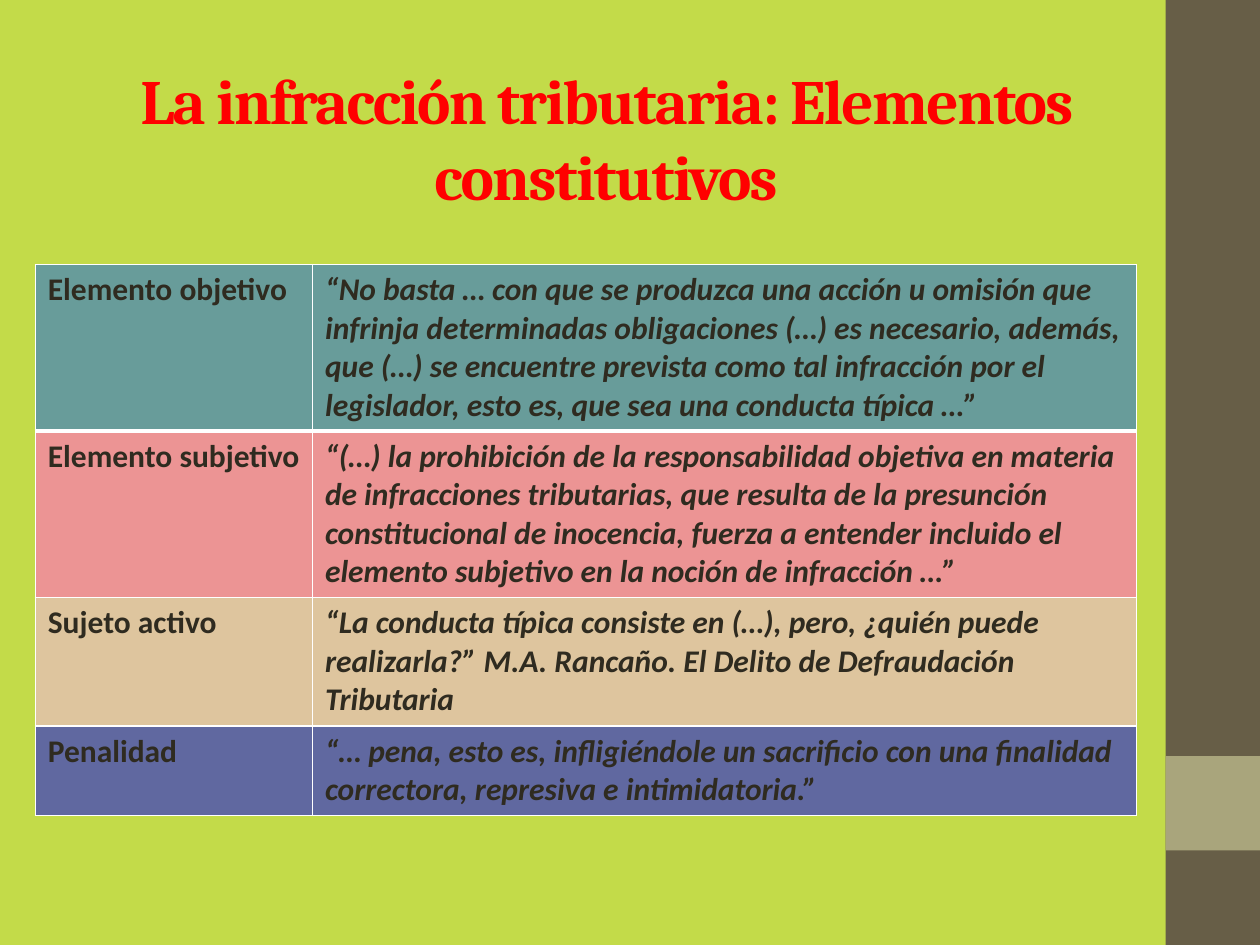
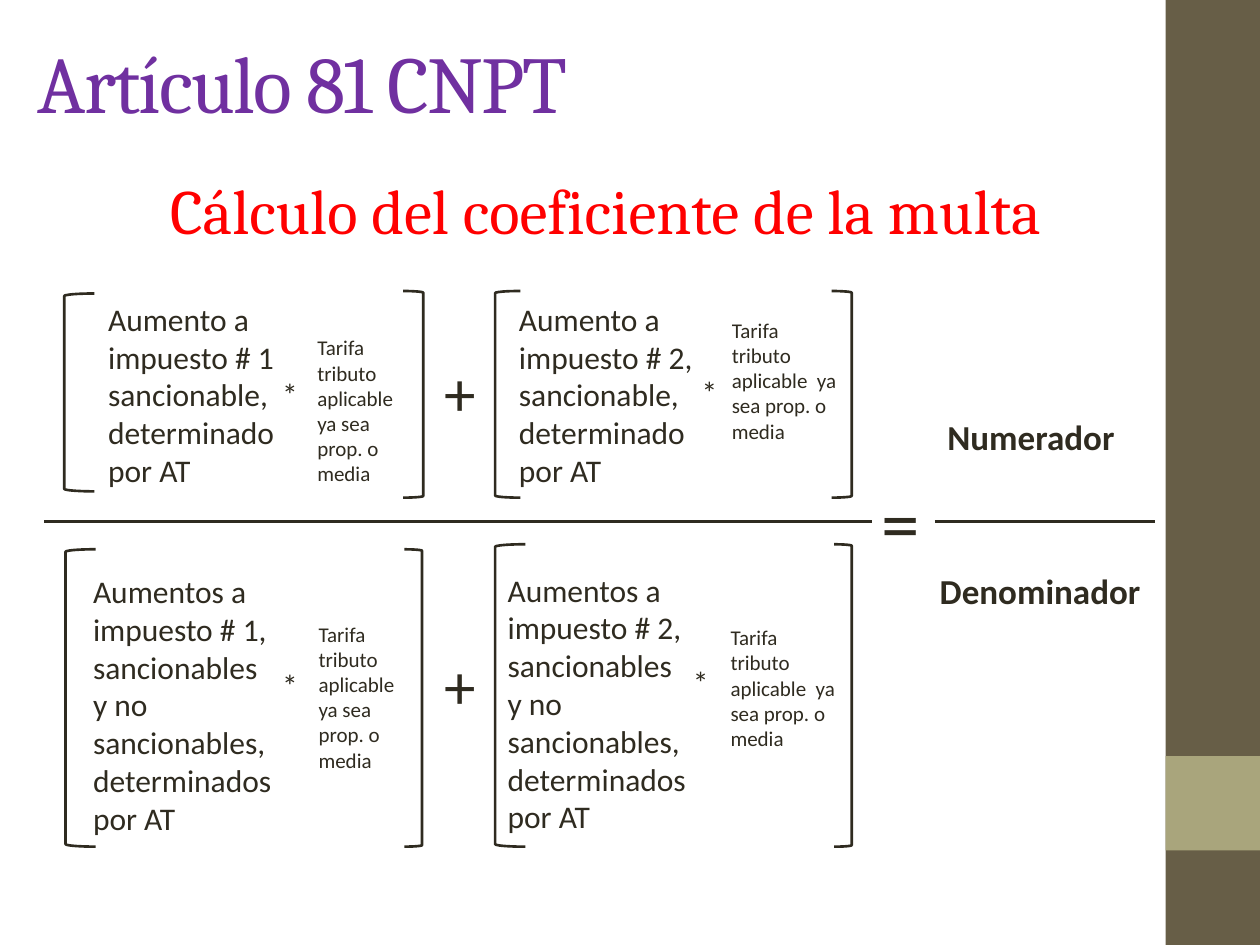
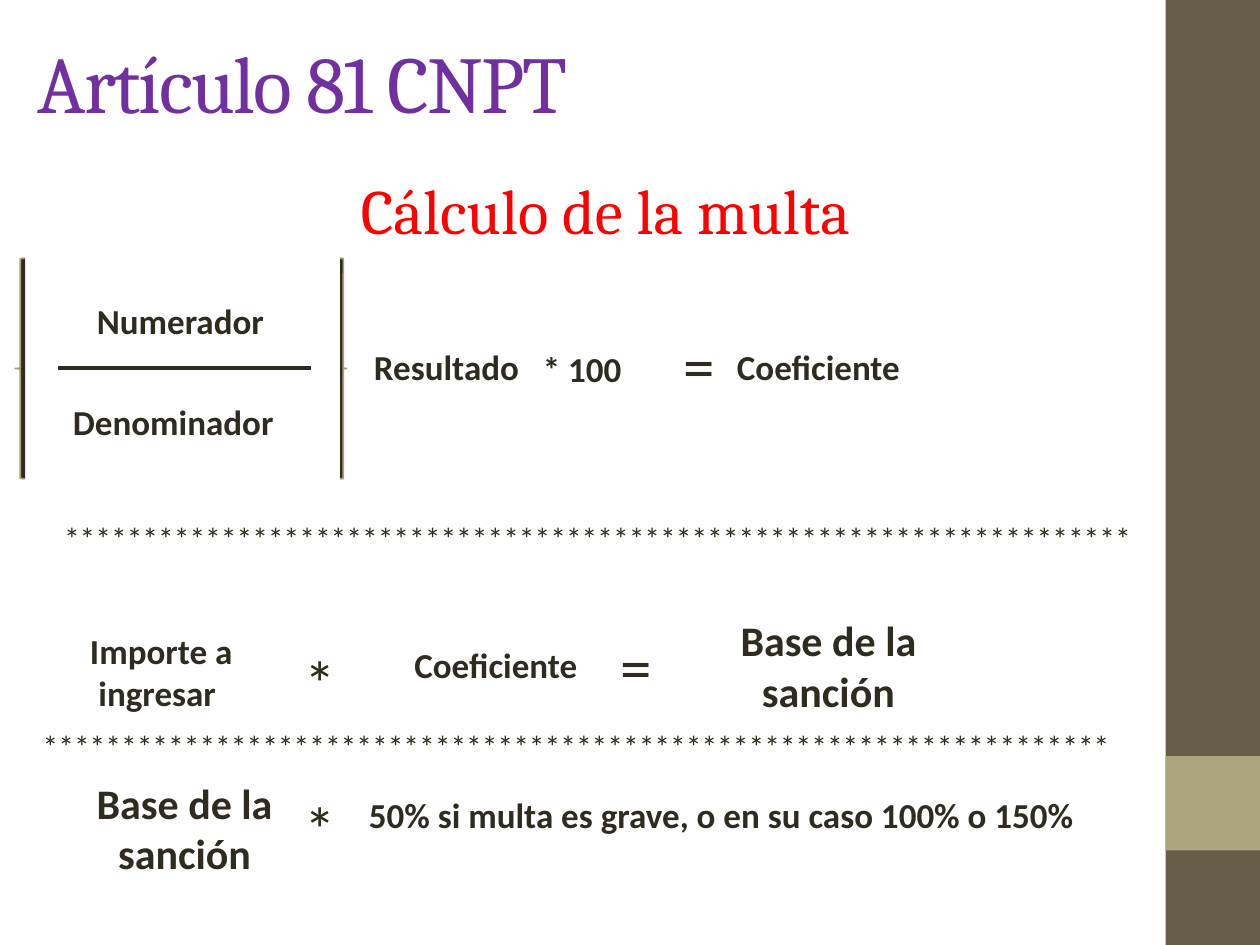
"""Build three slides on tax infractions and the calculation of the fine."""
from lxml.etree import SubElement
from pptx import Presentation
from pptx.dml.color import RGBColor
from pptx.enum.shapes import MSO_CONNECTOR, MSO_SHAPE
from pptx.enum.text import MSO_ANCHOR, MSO_AUTO_SIZE, PP_ALIGN
from pptx.oxml.ns import qn
from pptx.util import Inches, Pt

COLORS = {
    "lime": "C3DB49", "white": "FFFFFF", "band": "675E47", "accent": "A9A57C",
    "ink": "2F2B20", "red": "FF0000", "purple": "7030A0", "brace": "A6A278",
    "teal": "689C9A", "rose": "EC9494", "sand": "DEC59E", "indigo": "6068A0",
}
HEADING_FONT, BODY_FONT = "Cambria", "Calibri"
LEFT, CENTER = PP_ALIGN.LEFT, PP_ALIGN.CENTER

ELEMENTS_TITLE = "La infracción tributaria: Elementos constitutivos"
ELEMENTS = [
    ("Elemento objetivo",
     "“No basta … con que se produzca una acción u omisión que infrinja determinadas "
     "obligaciones (…) es necesario, además, que (…) se encuentre prevista como tal "
     "infracción por el legislador, esto es, que sea una conducta típica …”", "teal", 1.32),
    ("Elemento subjetivo",
     "“(…) la prohibición de la responsabilidad objetiva en materia de infracciones "
     "tributarias, que resulta de la presunción constitucional de inocencia, fuerza a "
     "entender incluido el elemento subjetivo en la noción de infracción …”", "rose", 1.32),
    ("Sujeto activo",
     "“La conducta típica consiste en (…), pero, ¿quién puede realizarla?” M.A. Rancaño. "
     "El Delito de Defraudación Tributaria", "sand", 1.02),
    ("Penalidad",
     "“… pena, esto es, infligiéndole un sacrificio con una finalidad correctora, "
     "represiva e intimidatoria.”", "indigo", 0.71),
]
ELEMENT_COLUMNS = (2.2, 6.54)

ARTICLE_TITLE = "Artículo 81 CNPT"
RATE = "Tarifa tributo aplicable  ya sea prop. o media"
INCREASES = "Aumentos a impuesto # {}, sancionables y no sancionables, determinados por AT"

COEFFICIENT_HEADING = "Cálculo del coeficiente de la multa"
COEFFICIENT_LABELS = [
    (0.76, 2.33, 1.54, "Aumento a impuesto # 1 sancionable, determinado por AT", 18),
    (4.02, 2.33, 1.61, "Aumento a impuesto # 2, sancionable, determinado por AT", 18),
    (0.64, 4.49, 1.66, INCREASES.format(1), 18),
    (3.93, 4.48, 1.62, INCREASES.format(2), 18),
    (2.42, 2.61, 0.86, RATE, 12),
    (5.71, 2.47, 1.06, RATE, 12),
    (2.43, 4.88, 0.85, RATE, 12),
    (5.7, 4.91, 1.06, RATE, 12),
    (2.14, 2.93, 0.31, "*", 18),
    (5.47, 2.91, 0.31, "*", 18),
    (2.14, 5.24, 0.31, "*", 18),
    (5.4, 5.21, 0.31, "*", 18),
    (3.43, 2.76, 0.31, "+", 36),
    (3.43, 5.08, 0.31, "+", 36),
    (6.9, 3.72, 0.31, "=", 44),
    (7.42, 3.25, 1.65, "Numerador", 20, True),
    (7.36, 4.47, 2.1, "Denominador", 20, True),
]
BRACKET_PAIRS = [
    ((0.51, 2.33, 0.24, 1.57), (3.2, 2.31, 0.16, 1.64)),
    ((3.93, 2.31, 0.2, 1.64), (6.6, 2.31, 0.16, 1.64)),
    ((0.52, 4.36, 0.24, 2.36), (3.21, 4.36, 0.14, 2.36)),
    ((3.93, 4.32, 0.24, 2.4), (6.62, 4.32, 0.14, 2.4)),
]
COEFFICIENT_BARS = [(0.35, 6.92, 4.14), (7.42, 9.17, 4.14)]

FINE_HEADING = "Cálculo de la multa"
SEPARATOR = "*" * 68
FINE_LABELS = [
    (0.67, 2.33, 1.57, "Numerador", 20, True),
    (0.48, 3.13, 1.82, "Denominador", 20, True),
    (2.87, 2.69, 1.5, "Resultado", 20, True),
    (4.21, 2.71, 1.11, "* 100", 20, True),
    (5.33, 2.54, 0.39, "=", 36),
    (5.75, 2.69, 1.65, "Coeficiente", 20, True),
    (0.41, 4.07, 8.78, SEPARATOR, 18),
    (0.31, 4.95, 1.94, "Importe a ingresar ", 20, True, CENTER),
    (2.32, 5.06, 0.87, "*", 36),
    (3.19, 5.06, 1.65, "Coeficiente", 20, True),
    (4.83, 4.93, 0.39, "=", 36),
    (5.55, 4.83, 2.05, "Base de la sanción", 24, True, CENTER),
    (0.24, 5.72, 8.78, SEPARATOR, 18),
    (0.44, 6.12, 2.05, "Base de la sanción", 24, True, CENTER),
    (2.32, 6.22, 0.87, "*", 36),
    (2.83, 6.25, 6.03, "50% si multa es grave, o en su caso 100% o 150%", 20, True),
]
FINE_BRACES = ((0.12, 2.05, 0.08, 1.75), (2.7, 2.05, 0.05, 1.75))
FINE_BAR = (0.46, 2.47, 2.92)


def rgb(name):
    return RGBColor.from_string(COLORS[name])


def write(frame, text, size, color="ink", font=BODY_FONT, bold=False, italic=False, align=LEFT):
    frame.text = text
    paragraph = frame.paragraphs[0]
    paragraph.alignment = align
    style = paragraph.runs[0].font
    style.name, style.size, style.bold, style.italic = font, Pt(size), bold, italic
    style.color.rgb = rgb(color)
    return paragraph.runs[0]


def add_outline(slide, preset, box, fill=None, line=None, width=1.5):
    outline = slide.shapes.add_shape(preset, *map(Inches, box))
    outline.shadow.inherit = False
    if fill:
        outline.fill.solid()
        outline.fill.fore_color.rgb = rgb(fill)
    else:
        outline.fill.background()
    if line:
        outline.line.color.rgb = rgb(line)
        outline.line.width = Pt(width)
    else:
        outline.line.fill.background()


def add_pair(slide, presets, boxes, **style):
    for preset, box in zip(presets, boxes):
        add_outline(slide, preset, box, **style)


def add_bar(slide, start, end, top):
    bar = slide.shapes.add_connector(
        MSO_CONNECTOR.STRAIGHT, Inches(start), Inches(top), Inches(end), Inches(top))
    bar.line.color.rgb = rgb("ink")
    bar.line.width = Pt(2)
    SubElement(bar.element.spPr, qn("a:effectLst"))


def add_label(slide, left, top, width, text, size, bold=False, align=LEFT):
    height = 0.5
    label = slide.shapes.add_textbox(*map(Inches, (left, top, width, height)))
    label.text_frame.word_wrap = True
    write(label.text_frame, text, size, bold=bold, align=align)


def add_slide(deck, background, title, box, size, color, bold=False, align=LEFT):
    slide = deck.slides.add_slide(deck.slide_layouts[5])
    slide.background.fill.solid()
    slide.background.fill.fore_color.rgb = rgb(background)
    add_outline(slide, MSO_SHAPE.RECTANGLE, (9.25, 0, 0.75, 7.5), fill="band")
    add_outline(slide, MSO_SHAPE.RECTANGLE, (9.25, 6, 0.75, 0.75), fill="accent")
    heading = slide.shapes.title
    heading.left, heading.top, heading.width, heading.height = map(Inches, box)
    frame = heading.text_frame
    frame.word_wrap = True
    frame.auto_size = MSO_AUTO_SIZE.NONE
    frame.vertical_anchor = MSO_ANCHOR.TOP
    run = write(frame, title, size, color, HEADING_FONT, bold, align=align)
    run.font._element.set("spc", "-100")
    return slide


def add_article_slide(deck, heading, labels):
    slide = add_slide(deck, "white", ARTICLE_TITLE, (0.2, 0.21, 8.97, 0.87), 46, "purple")
    subtitle = slide.shapes.add_textbox(*map(Inches, (0.67, 1.07, 8.27, 0.94)))
    subtitle.text_frame.word_wrap = True
    subtitle.text_frame.vertical_anchor = MSO_ANCHOR.BOTTOM
    write(subtitle.text_frame, heading, 36, "red", HEADING_FONT, align=CENTER)
    for label in labels:
        add_label(slide, *label)
    return slide


def add_borders(cell, widths):
    properties = cell._tc.get_or_add_tcPr()
    for side, width in zip(("lnL", "lnR", "lnT", "lnB"), widths):
        border = SubElement(properties, qn(f"a:{side}"), w=str(Pt(width)))
        fill = SubElement(border, qn("a:solidFill"))
        SubElement(fill, qn("a:srgbClr"), val=COLORS["white"])


def add_elements_table(slide):
    height = sum(element[-1] for element in ELEMENTS)
    box = map(Inches, (0.28, 2.1, sum(ELEMENT_COLUMNS), height))
    table = slide.shapes.add_table(len(ELEMENTS), len(ELEMENT_COLUMNS), *box).table
    table.horz_banding = False
    for column, width in zip(table.columns, ELEMENT_COLUMNS):
        column.width = Inches(width)
    for index, (name, quote, fill, row_height) in enumerate(ELEMENTS):
        table.rows[index].height = Inches(row_height)
        top, bottom = (3 if index == 1 else 1), (3 if index == 0 else 1)
        for column, text in enumerate((name, quote)):
            cell = table.cell(index, column)
            add_borders(cell, (1, 1, top, bottom))
            cell.fill.solid()
            cell.fill.fore_color.rgb = rgb(fill)
            write(cell.text_frame, text, 18, bold=True, italic=column == 1)


def main():
    deck = Presentation()
    deck.slide_width, deck.slide_height = Inches(10), Inches(7.5)

    elements = add_slide(deck, "lime", ELEMENTS_TITLE, (0.28, 0.44, 9.06, 0.87), 36, "red",
                         bold=True, align=CENTER)
    add_elements_table(elements)

    coefficient = add_article_slide(deck, COEFFICIENT_HEADING, COEFFICIENT_LABELS)
    for pair in BRACKET_PAIRS:
        add_pair(coefficient, (MSO_SHAPE.LEFT_BRACKET, MSO_SHAPE.RIGHT_BRACKET), pair, line="ink")
    for bar in COEFFICIENT_BARS:
        add_bar(coefficient, *bar)

    fine = add_article_slide(deck, FINE_HEADING, FINE_LABELS)
    add_pair(fine, (MSO_SHAPE.LEFT_BRACE, MSO_SHAPE.RIGHT_BRACE), FINE_BRACES,
             fill="ink", line="brace", width=1)
    add_bar(fine, *FINE_BAR)

    deck.save("out.pptx")


if __name__ == "__main__":
    main()
